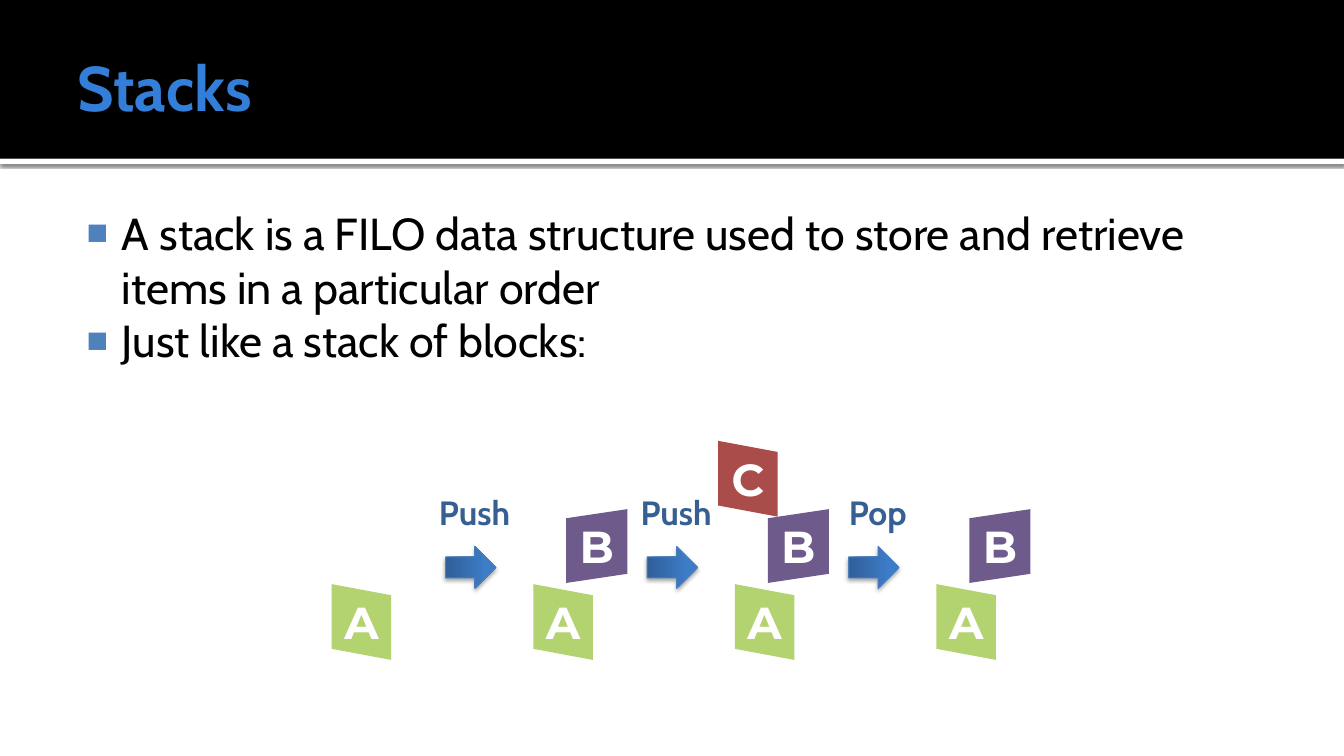
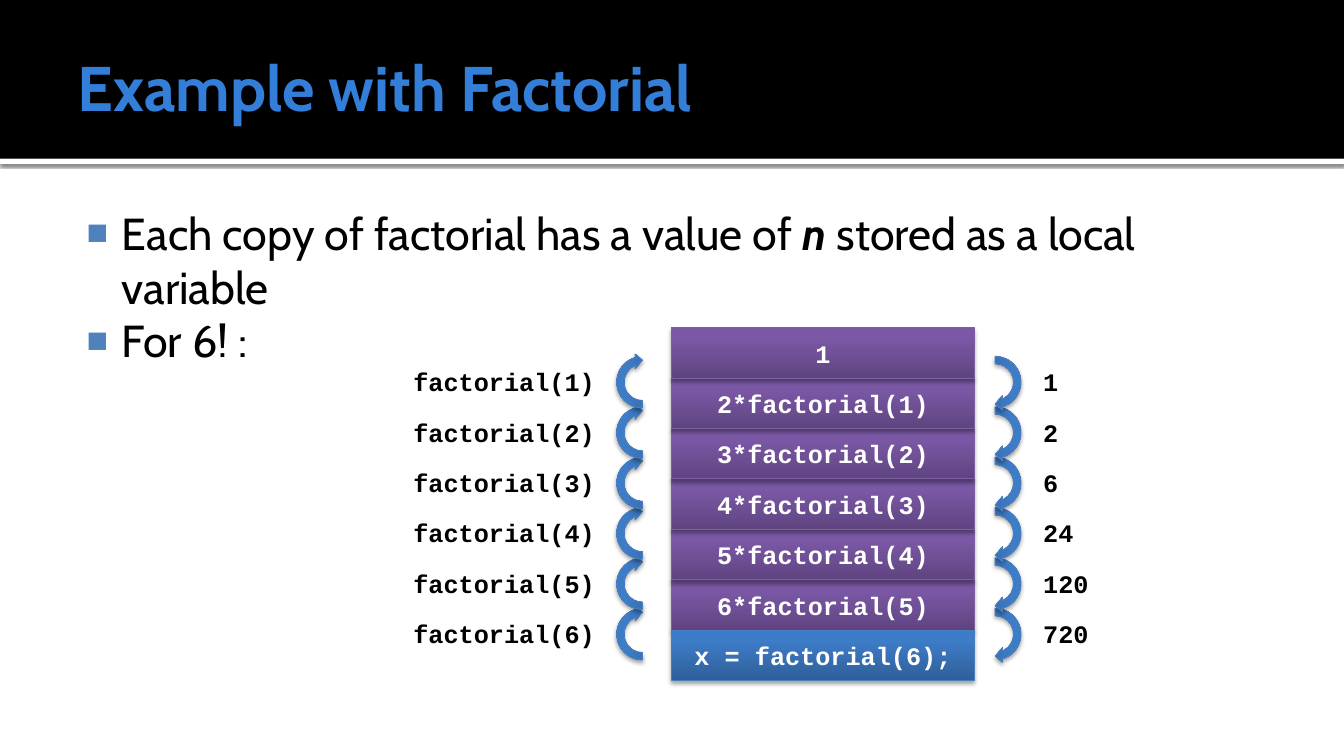
from pptx import Presentation
from pptx.dml.color import RGBColor
from pptx.enum.shapes import MSO_SHAPE as SHAPE
from pptx.enum.text import MSO_ANCHOR as ANCHOR, MSO_AUTO_SIZE as AUTO, PP_ALIGN as ALIGN
from pptx.oxml import parse_xml
from pptx.oxml.ns import nsdecls, qn
from pptx.util import Cm, Pt

WIDTH, HEIGHT = 33.87, 19.05
BAND_H, RULE_H = 4, 0.13
BODY_FONT, BLOCK_FONT, CODE_FONT = "Cabin", "Montserrat", "Courier New"
BLACK, WHITE = "000000", "FFFFFF"
TITLE_BLUE, BULLET_BLUE, LABEL_BLUE = "337ED9", "4F81BD", "376092"
# gradient stops (percent, colour) and line colour
BLUE = ([(0, "2F5F99"), (80, "3D7CC7"), (100, "3A7CCB")], "4B7EBC")
PURPLE = ([(0, "5F4480"), (80, "7B58A6"), (100, "7C57A8")], "7D60A0")

STACKS = (
    "Stacks",
    [[("A stack is a FILO data structure used to store and retrieve items "
       "in a particular order", False)],
     [("Just like a stack of blocks:", False)]],
)
FACTORIAL = (
    "Example with Factorial",
    [[("Each copy of factorial has a value of ", False), ("n", True),
      (" stored as a local variable", False)],
     [("For 6! :", False)]],
)

# letter: colour, offset from the stack's left, top, width, slant (down to the right)
BLOCKS = {
    "A": ("B2D36F", 0, 14.72, 1.5, 0.28),
    "B": ("6E5A8B", 0.83, 12.83, 1.54, -0.23),
    "C": ("AA4C4A", -0.42, 11.11, 1.5, 0.28),
}
BLOCK_SIDE = 1.63
STACK_STATES = [(None, "A"), ("Push", "AB"), ("Push", "ABC"), ("Pop", "AB")]
STACK_LEFT, STACK_STEP = 8.36, 5.08

FRAMES = ["1"] + [f"{n}*factorial({n - 1})" for n in range(2, 7)]
MAIN_CALL = "x = factorial(6);"
RETURNS = [1, 2, 6, 24, 120, 720]
FRAME_LEFT, FRAME_TOP, FRAME_W, FRAME_H = 16.93, 8.26, 7.62, 1.27
ARC_SIZE, ARC_TOP = 1.48, 8.89
CALL_LEFT, RETURN_LEFT, LABEL_TOP, LABEL_W = 9.74, 26.04, 9.11, 5.5


def rgb(color):
    return RGBColor.from_string(color)


def add_run(p, text, font, size, color, bold=False, italic=False):
    r = p.add_run()
    r.text = text
    r.font.name, r.font.size = font, Pt(size)
    r.font.bold, r.font.italic = bold, italic
    r.font.color.rgb = rgb(color)


def set_shadow(sp, alpha, blur, dist):
    sp._element.spPr.append(parse_xml(
        f'<a:effectLst {nsdecls("a")}><a:outerShdw blurRad="{Pt(blur)}" dist="{Pt(dist)}" '
        f'dir="5400000" rotWithShape="0"><a:srgbClr val="{BLACK}">'
        f'<a:alpha val="{alpha * 1000}"/></a:srgbClr></a:outerShdw></a:effectLst>'))


def set_solid(sp, color):
    sp.fill.solid()
    sp.fill.fore_color.rgb = rgb(color)
    sp.line.fill.background()


def add_glossy(s, kind, left, top, width, height, scheme, angle=90, rotation=0):
    """Preset shape with gradient, thin line and soft shadow."""
    stops, line = scheme
    sp = s.shapes.add_shape(kind, Cm(left), Cm(top), Cm(width), Cm(height))
    sp.rotation = rotation
    sp.fill.gradient()
    sp.fill.gradient_angle = angle
    stop_list = sp._element.spPr.find(qn("a:gradFill")).find(qn("a:gsLst"))
    for old in list(stop_list):
        stop_list.remove(old)
    for percent, color in stops:
        stop_list.append(parse_xml(
            f'<a:gs {nsdecls("a")} pos="{percent * 1000}"><a:srgbClr val="{color}"/></a:gs>'))
    sp.line.color.rgb, sp.line.width = rgb(line), Pt(0.75)
    set_shadow(sp, 35, 3.1, 1.8)
    return sp


def center_text(sp, text, font, size):
    tf = sp.text_frame
    tf.word_wrap, tf.vertical_anchor = False, ANCHOR.MIDDLE
    tf.margin_left = tf.margin_right = tf.margin_top = tf.margin_bottom = 0
    p = tf.paragraphs[0]
    p.alignment = ALIGN.CENTER
    add_run(p, text, font, size, WHITE, bold=True)


def add_label(s, text, left, top, width, height, align, font, size, color):
    tf = s.shapes.add_textbox(Cm(left), Cm(top), Cm(width), Cm(height)).text_frame
    tf.word_wrap = True
    p = tf.paragraphs[0]
    p.alignment = align
    add_run(p, text, font, size, color, bold=True)


def add_master_bands(prs, s):
    """Draw the header bands on a slide, then move them behind the master's parts."""
    rule = s.shapes.add_shape(SHAPE.RECTANGLE, 0, Cm(BAND_H), Cm(WIDTH), Cm(RULE_H))
    set_solid(rule, WHITE)
    set_shadow(rule, 60, 2.5, 0.8)
    band = s.shapes.add_shape(SHAPE.RECTANGLE, 0, 0, Cm(WIDTH), Cm(BAND_H))
    set_solid(band, BLACK)
    band.shadow.inherit = False
    for i, sp in enumerate((rule, band)):
        prs.slide_master.shapes._spTree.insert(2 + i, sp._element)


def place(holder, top, height, margins, anchor):
    holder.left, holder.top = Cm(1.7), Cm(top)
    holder.width, holder.height = Cm(30.48), Cm(height)
    tf = holder.text_frame
    tf.auto_size, tf.word_wrap, tf.vertical_anchor = AUTO.NONE, True, anchor
    tf.margin_left, tf.margin_top, tf.margin_right, tf.margin_bottom = map(Cm, margins)
    return tf


def add_bullet(p):
    pPr = p._p.get_or_add_pPr()
    pPr.set("marL", str(Cm(1.22)))
    pPr.set("indent", str(Cm(-0.89)))
    for xml in (f'<a:buClr {nsdecls("a")}><a:srgbClr val="{BULLET_BLUE}"/></a:buClr>',
                f'<a:buSzPct {nsdecls("a")} val="80000"/>',
                f'<a:buFont {nsdecls("a")} typeface="Arial"/>',
                f'<a:buChar {nsdecls("a")} char="■"/>'):
        pPr.append(parse_xml(xml))
    p.space_before = Pt(0)


def add_slide(prs, content):
    title, bullets = content
    s = prs.slides.add_slide(prs.slide_layouts[1])
    tf = place(s.shapes.title, 0.43, 3.48, (0.25, 0.13, 0.13, 0.13), ANCHOR.MIDDLE)
    tf.paragraphs[0].alignment = ALIGN.LEFT
    add_run(tf.paragraphs[0], title, BODY_FONT, 45, TITLE_BLUE, bold=True)
    tf = place(s.placeholders[1], 4.93, 12.85, (0.15, 0.25, 0.25, 0.13), ANCHOR.TOP)
    for i, runs in enumerate(bullets):
        p = tf.add_paragraph() if i else tf.paragraphs[0]
        add_bullet(p)
        for text, strong in runs:
            add_run(p, text, BODY_FONT, 32, BLACK, bold=strong, italic=strong)
    return s


def add_block(s, letter, stack_left):
    color, offset, top, width, slant = BLOCKS[letter]
    left, right = stack_left + offset, stack_left + offset + width
    left_top, right_top = top + max(-slant, 0), top + max(slant, 0)
    corners = [(Cm(x), Cm(y)) for x, y in (
        (left, left_top), (right, right_top),
        (right, right_top + BLOCK_SIDE), (left, left_top + BLOCK_SIDE))]
    outline = s.shapes.build_freeform(*corners[0])
    outline.add_line_segments(corners[1:], close=True)
    sp = outline.convert_to_shape()
    set_solid(sp, color)
    sp.shadow.inherit = False
    center_text(sp, letter, BLOCK_FONT, 32)


def draw_stacks(s):
    for i, (action, letters) in enumerate(STACK_STATES):
        left = STACK_LEFT + i * STACK_STEP
        for letter in letters:
            add_block(s, letter, left)
        if action:
            add_glossy(s, SHAPE.RIGHT_ARROW, left - 2.21, 13.77, 1.27, 1.06, BLUE, angle=0)
            add_label(s, action, left - 2.85, 12.27, 2.74, 1.27, ALIGN.CENTER,
                      BODY_FONT, 24, LABEL_BLUE)


def draw_calls(s):
    frames = [(i, text, PURPLE) for i, text in enumerate(FRAMES)]
    for i, text, scheme in frames[::-1] + [(len(FRAMES), MAIN_CALL, BLUE)]:
        sp = add_glossy(s, SHAPE.RECTANGLE, FRAME_LEFT, FRAME_TOP + i * FRAME_H,
                        FRAME_W, FRAME_H, scheme)
        center_text(sp, text, CODE_FONT, 18)
    calls = [f"factorial({n})" for n in range(1, 7)]
    for labels, arc_left, rotation, label_left, align in (
            (calls, 15.45, 270, CALL_LEFT, ALIGN.RIGHT),
            (RETURNS, 24.34, 90, RETURN_LEFT, ALIGN.LEFT)):
        for i, text in reversed(list(enumerate(labels))):
            add_glossy(s, SHAPE.CIRCULAR_ARROW, arc_left, ARC_TOP + i * FRAME_H,
                       ARC_SIZE, ARC_SIZE, BLUE, rotation=rotation)
            add_label(s, str(text), label_left, LABEL_TOP + i * FRAME_H, LABEL_W, 1.02,
                      align, CODE_FONT, 18, BLACK)


def main():
    prs = Presentation()
    prs.slide_width, prs.slide_height = Cm(WIDTH), Cm(HEIGHT)
    stacks = add_slide(prs, STACKS)
    add_master_bands(prs, stacks)
    draw_stacks(stacks)
    draw_calls(add_slide(prs, FACTORIAL))
    prs.save("out.pptx")


if __name__ == "__main__":
    main()
